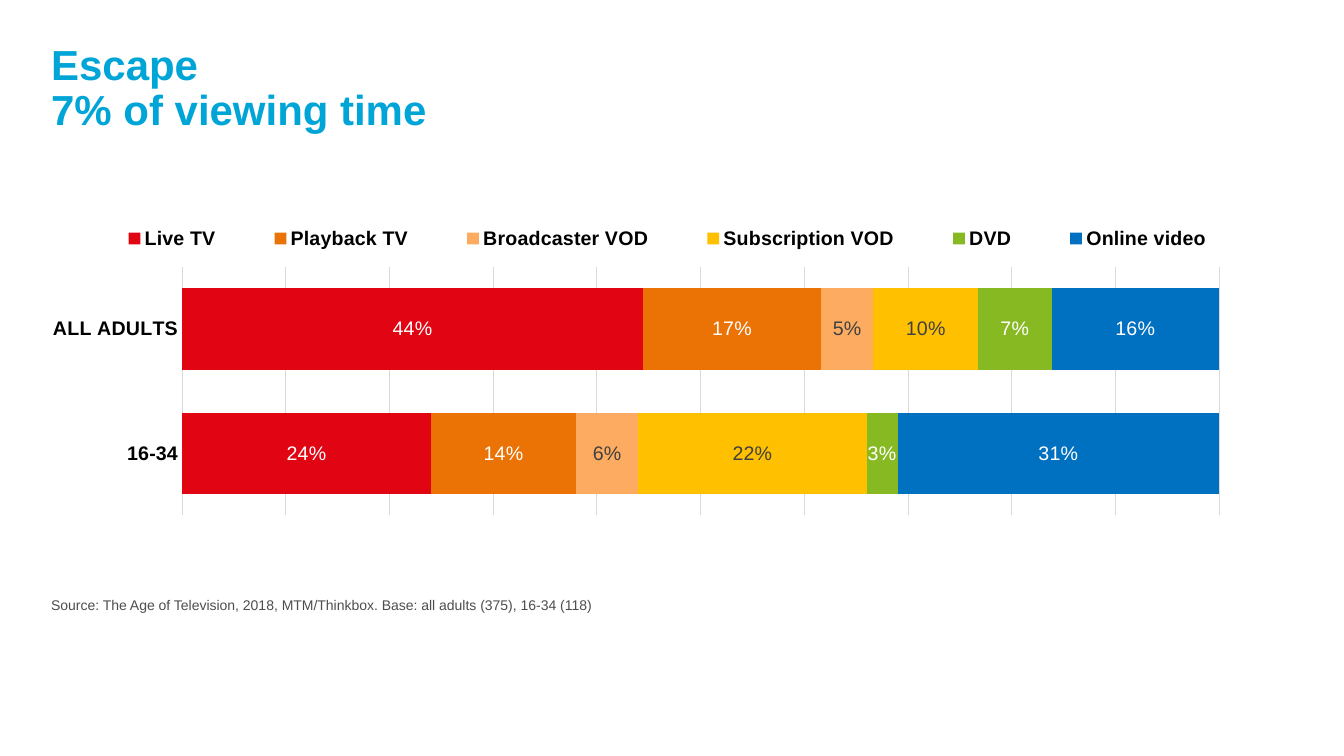
"""Build a slide comparing how two audiences split their escape viewing time."""
import pptx
import pptx.chart.data
import pptx.dml.color
import pptx.enum.chart
import pptx.enum.text
import pptx.oxml
import pptx.oxml.ns
import pptx.util
from pptx.util import Cm

FONT = "Arial"
COLORS = {
    "title": "00A5D7", "source": "4D4D4D", "text": "000000", "grid": "D9D9D9",
    "light": "FFFFFF", "dark": "404040",
    "Live TV": "E10514", "Playback TV": "EB7305", "Broadcaster VOD": "FCAB60",
    "Subscription VOD": "FFC000", "DVD": "87B923", "Online video": "0070C0",
}
AUDIENCES = ["16-34", "ALL ADULTS"]
VIEWING = [
    ("Live TV", (0.24, 0.44), "light"),
    ("Playback TV", (0.14, 0.17), "light"),
    ("Broadcaster VOD", (0.06, 0.05), "dark"),
    ("Subscription VOD", (0.22, 0.10), "dark"),
    ("DVD", (0.03, 0.07), "light"),
    ("Online video", (0.31, 0.16), "light"),
]


def rgb(name):
    """Return the named colour."""
    return pptx.dml.color.RGBColor.from_string(COLORS[name])


def style_font(font, size, color, bold=False):
    """Set family, size, colour and weight of a font."""
    font.name = FONT
    font.size = pptx.util.Pt(size)
    font.bold = bold
    font.color.rgb = rgb(color)


def style_line(line):
    """Draw a thin grey line."""
    line.color.rgb = rgb("grid")
    line.width = pptx.util.Pt(0.75)


def add_text(slide, text, top, height, size, color, bold=False, spacing=1.0):
    """Add a full-width text box anchored at its top."""
    frame = slide.shapes.add_textbox(Cm(1.04), top, Cm(31.5), height).text_frame
    frame.word_wrap = True
    frame.vertical_anchor = pptx.enum.text.MSO_ANCHOR.TOP
    paragraph = frame.paragraphs[0]
    paragraph.text = text
    paragraph.line_spacing = spacing
    style_font(paragraph.font, size, color, bold)
    for run in paragraph.runs:
        style_font(run.font, size, color, bold)


def place(part, index, x, y, width, height, inner=False):
    """Give a chart part a fixed layout in fractions of the chart."""
    for previous in part.xpath("c:layout"):
        part.remove(previous)
    target = '<c:layoutTarget val="inner"/>' if inner else ""
    part.insert(index, pptx.oxml.parse_xml(
        f'<c:layout {pptx.oxml.ns.nsdecls("c")}><c:manualLayout>{target}'
        '<c:xMode val="edge"/><c:yMode val="edge"/>'
        f'<c:x val="{x}"/><c:y val="{y}"/><c:w val="{width}"/><c:h val="{height}"/>'
        "</c:manualLayout></c:layout>"))


def style_axes(chart):
    """Label the audiences and keep only the gridlines of the share axis."""
    audience_axis = chart.category_axis
    audience_axis.major_tick_mark = pptx.enum.chart.XL_TICK_MARK.NONE
    audience_axis.has_major_gridlines = False
    style_font(audience_axis.tick_labels.font, 14, "text", True)
    style_line(audience_axis.format.line)
    share_axis = chart.value_axis
    share_axis.minimum_scale, share_axis.maximum_scale = 0, 1
    share_axis.major_unit = 0.1
    share_axis.has_major_gridlines = True
    style_line(share_axis.major_gridlines.format.line)
    share_axis.visible = False


def style_series(series, label_color):
    """Colour a viewing type and label its shares."""
    series.format.fill.solid()
    series.format.fill.fore_color.rgb = rgb(series.name)
    labels = series.data_labels
    labels.show_value = True
    labels.number_format = "0%"
    labels.number_format_is_linked = False
    labels.position = pptx.enum.chart.XL_LABEL_POSITION.CENTER
    style_font(labels.font, 14, label_color)


def add_viewing_chart(slide):
    """Add the stacked bars with their legend above them."""
    data = pptx.chart.data.CategoryChartData(number_format="0%")
    data.categories = AUDIENCES
    for name, shares, _ in VIEWING:
        data.add_series(name, shares)
    chart = slide.shapes.add_chart(
        pptx.enum.chart.XL_CHART_TYPE.BAR_STACKED_100,
        Cm(1.3), Cm(4.55), Cm(31.04), Cm(9.12), data).chart
    chart.has_title = False
    style_font(chart.font, 10, "text")
    bars = chart.plots[0]
    bars.gap_width = 53
    bars.overlap = 100
    bars.vary_by_categories = False
    for series, (_, _, label_color) in zip(bars.series, VIEWING):
        style_series(series, label_color)
    style_axes(chart)
    chart.has_legend = True
    chart.legend.position = pptx.enum.chart.XL_LEGEND_POSITION.BOTTOM
    chart.legend.include_in_layout = False
    style_font(chart.legend.font, 14, "text", True)
    place(chart.element.xpath("c:chart/c:legend")[0], 1, 0.02, 0.11, 0.96, 0.1)
    place(chart.element.xpath("c:chart/c:plotArea")[0], 0,
          0.106, 0.239, 0.842, 0.686, inner=True)


def main():
    """Assemble and save the slide."""
    deck = pptx.Presentation()
    deck.slide_width, deck.slide_height = Cm(33.87), Cm(19.05)
    slide = deck.slides.add_slide(deck.slide_layouts[6])
    add_text(slide, "Escape\v7% of viewing time", Cm(0.99), Cm(2.84), 30, "title", True, 0.9)
    add_viewing_chart(slide)
    add_text(slide, "Source: The Age of Television, 2018, MTM/Thinkbox. "
             "Base: all adults (375), 16-34 (118)", Cm(14.91), Cm(0.84), 10, "source")
    deck.save("out.pptx")


if __name__ == "__main__":
    main()
